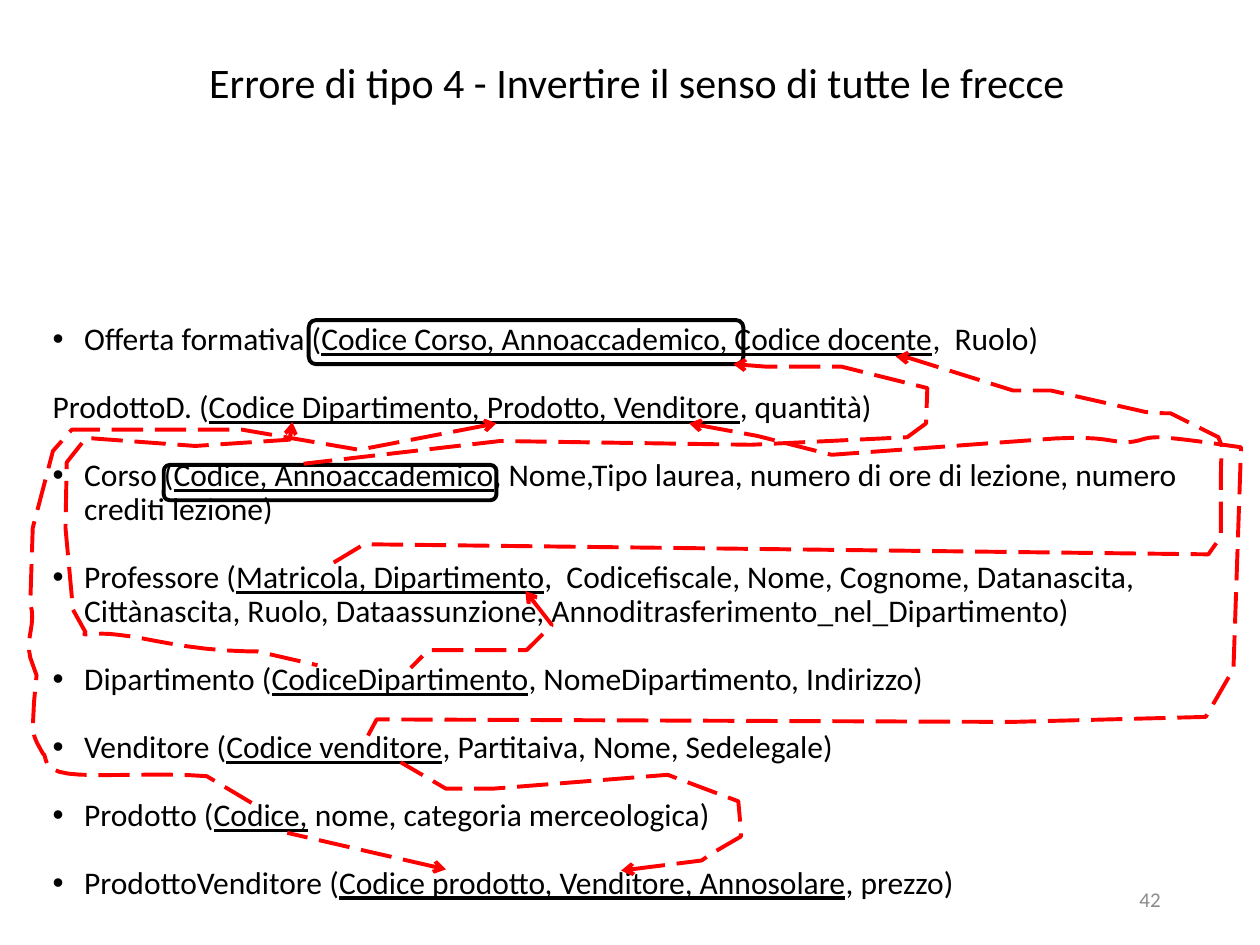
from lxml import etree
from pptx import Presentation
from pptx.dml.color import RGBColor
from pptx.enum.dml import MSO_LINE
from pptx.enum.shapes import MSO_SHAPE
from pptx.enum.text import MSO_ANCHOR, PP_ALIGN
from pptx.oxml.ns import qn
from pptx.util import Emu, Pt

PX = 9144  # 100 px to the inch
FONT = "Calibri"
BLACK = RGBColor(0x00, 0x00, 0x00)
RED = RGBColor(0xFF, 0x00, 0x00)
GREY = RGBColor(0x8C, 0x8C, 0x8C)
ROUNDED = MSO_SHAPE.ROUNDED_RECTANGLE
LONG_DASH = MSO_LINE.LONG_DASH
TOP, MIDDLE = MSO_ANCHOR.TOP, MSO_ANCHOR.MIDDLE
LEFT, CENTER, RIGHT = PP_ALIGN.LEFT, PP_ALIGN.CENTER, PP_ALIGN.RIGHT
CURVE_STEPS = 8
LINE_WIDTH = Pt(2.25)
INDENT = 25

# Each relation: bulleted, text before the key, underlined key, text after
RELATIONS = [
    (True, "Offerta formativa (", "Codice Corso, Annoaccademico, Codice docente", ",  Ruolo)"),
    (False, "ProdottoD. (", "Codice Dipartimento, Prodotto, Venditore", ", quantità)"),
    (True, "Corso (", "Codice, Annoaccademico",
     ", Nome,Tipo laurea, numero di ore di lezione, numero crediti lezione)"),
    (True, "Professore (", "Matricola, Dipartimento",
     ",  Codicefiscale, Nome, Cognome, Datanascita, Cittànascita, Ruolo, "
     "Dataassunzione, Annoditrasferimento_nel_Dipartimento)"),
    (True, "Dipartimento (", "CodiceDipartimento", ", NomeDipartimento, Indirizzo)"),
    (True, "Venditore (", "Codice venditore", ", Partitaiva, Nome, Sedelegale)"),
    (True, "Prodotto (", "Codice,", " nome, categoria merceologica)"),
    (True, "ProdottoVenditore (", "Codice prodotto, Venditore, Annosolare", ", prezzo)"),
]

# Frames around composite keys
KEY_FRAMES = [(245, 254, 345, 35), (130, 369, 264, 28)]

# Arrow routes, tip first: pairs are corners, sextuples are cubic curves
ROUTES = [
    # Corso -> Offerta formativa
    [(582, 289), (608, 291), (668, 291), (736, 308), (735, 336), (720, 347),
     (596, 353), (397, 350), (241, 368)],
    # Venditore -> ProdottoD.
    [(547, 336), (601, 346), (660, 361), (838, 348), (877, 346, 881, 351, 895, 351),
     (908, 350, 906, 347, 921, 347), (936, 348, 964, 352, 985, 355), (979, 531),
     (957, 569), (803, 573), (299, 571), (292, 584)],
    # Venditore -> ProdottoVenditore
    [(493, 691), (557, 683), (564, 678), (588, 664), (588, 658), (586, 636),
     (530, 615), (391, 626), (354, 626), (318, 605)],
    # Dipartimento -> ProdottoD.
    [(232, 335), (230, 349), (155, 354), (74, 348), (68, 348), (53, 367), (52, 419),
     (58, 484), (68, 502), (63, 506, 74, 501, 95, 504), (116, 506, 148, 516, 196, 517),
     (204, 517), (252, 528)],
    # Prodotto -> ProdottoD.
    [(394, 336), (285, 357), (192, 341), (57, 341), (42, 358), (26, 419), (24, 479),
     (29, 495, 20, 506, 24, 522), (29, 536), (27, 557), (26, 578),
     (27, 586, 29, 589, 34, 598), (38, 600, 32, 611, 54, 614),
     (75, 617, 127, 613, 164, 616), (201, 638)],
    # Prodotto -> ProdottoVenditore
    [(354, 690), (228, 661)],
    # Professore -> Offerta formativa
    [(711, 283), (721, 284), (804, 310), (834, 310), (909, 327),
     (920, 328, 913, 328, 929, 328), (967, 347), (972, 360, 969, 351, 969, 377),
     (969, 426), (959, 440), (289, 432), (264, 447)],
    # Dipartimento -> Professore
    [(417, 469), (438, 496), (418, 516), (340, 516), (326, 530)],
]


def px(*values):
    return [Emu(v * PX) for v in values]


def add_run(p, text, size=18, color=BLACK, underline=False):
    r = p.add_run()
    r.text = text
    r.font.name, r.font.size = FONT, Pt(size)
    r.font.color.rgb = color
    if underline:
        r.font.underline = True


def add_text_box(s, box, anchor=TOP):
    tf = s.shapes.add_textbox(*px(*box)).text_frame
    tf.word_wrap = True
    tf.vertical_anchor = anchor
    return tf


def add_label(s, box, text, align=LEFT, **fmt):
    p = add_text_box(s, box, MIDDLE).paragraphs[0]
    p.alignment = align
    p.line_spacing = 0.9
    add_run(p, text, **fmt)


def add_bullet(p):
    pPr = p._p.get_or_add_pPr()
    pPr.set("marL", str(INDENT * PX))
    pPr.set("indent", str(-INDENT * PX))
    etree.SubElement(pPr, qn("a:buFont"), typeface="Arial")
    etree.SubElement(pPr, qn("a:buChar"), char="•")


def add_relations(s, box):
    tf = add_text_box(s, box)
    for i, (bulleted, before, key, after) in enumerate(RELATIONS):
        p = tf.add_paragraph() if i else tf.paragraphs[0]
        if bulleted:
            add_bullet(p)
        p.line_spacing = 0.9
        if i:
            p.space_before = Pt(19.4)
        add_run(p, before)
        add_run(p, key, underline=True)
        add_run(p, after)


def style_outline(sp, color):
    sp.shadow.inherit = False
    sp.fill.background()
    sp.line.color.rgb = color
    sp.line.width = LINE_WIDTH


def add_key_frame(s, box):
    style_outline(s.shapes.add_shape(ROUNDED, *px(*box)), BLACK)


def flatten(route):
    """Turn corners and cubic curves into one list of points."""
    points = [route[0]]
    for step in route[1:]:
        if len(step) == 2:
            points.append(step)
            continue
        ends = [points[-1], step[:2], step[2:4], step[4:]]
        for i in range(1, CURVE_STEPS + 1):
            t = i / CURVE_STEPS
            weights = ((1 - t) ** 3, 3 * t * (1 - t) ** 2, 3 * t * t * (1 - t), t ** 3)
            points.append(tuple(sum(w * e[axis] for w, e in zip(weights, ends))
                                for axis in (0, 1)))
    return points


def add_route(s, route):
    points = [(x * PX, y * PX) for x, y in flatten(route)]
    builder = s.shapes.build_freeform(*points[0])
    builder.add_line_segments(points[1:], close=False)
    sp = builder.convert_to_shape()
    style_outline(sp, RED)
    sp.line.dash_style = LONG_DASH
    etree.SubElement(sp.line._get_or_add_ln(), qn("a:headEnd"), type="arrow")


def main():
    prs = Presentation()
    prs.slide_width, prs.slide_height = px(1000, 750)
    s = prs.slides.add_slide(prs.slide_layouts[6])

    # Title and relational schema
    add_label(s, (26, 28, 959, 78),
              "Errore di tipo 4 - Invertire il senso di tutte le frecce",
              align=CENTER, size=24)
    add_relations(s, (32, 252, 956, 485))

    # Key frames and reference arrows
    for box in KEY_FRAMES:
        add_key_frame(s, box)
    for route in ROUTES:
        add_route(s, route)

    # Page number
    add_label(s, (706, 695, 225, 40), "42", align=RIGHT, size=12, color=GREY)

    prs.save("out.pptx")


if __name__ == "__main__":
    main()
